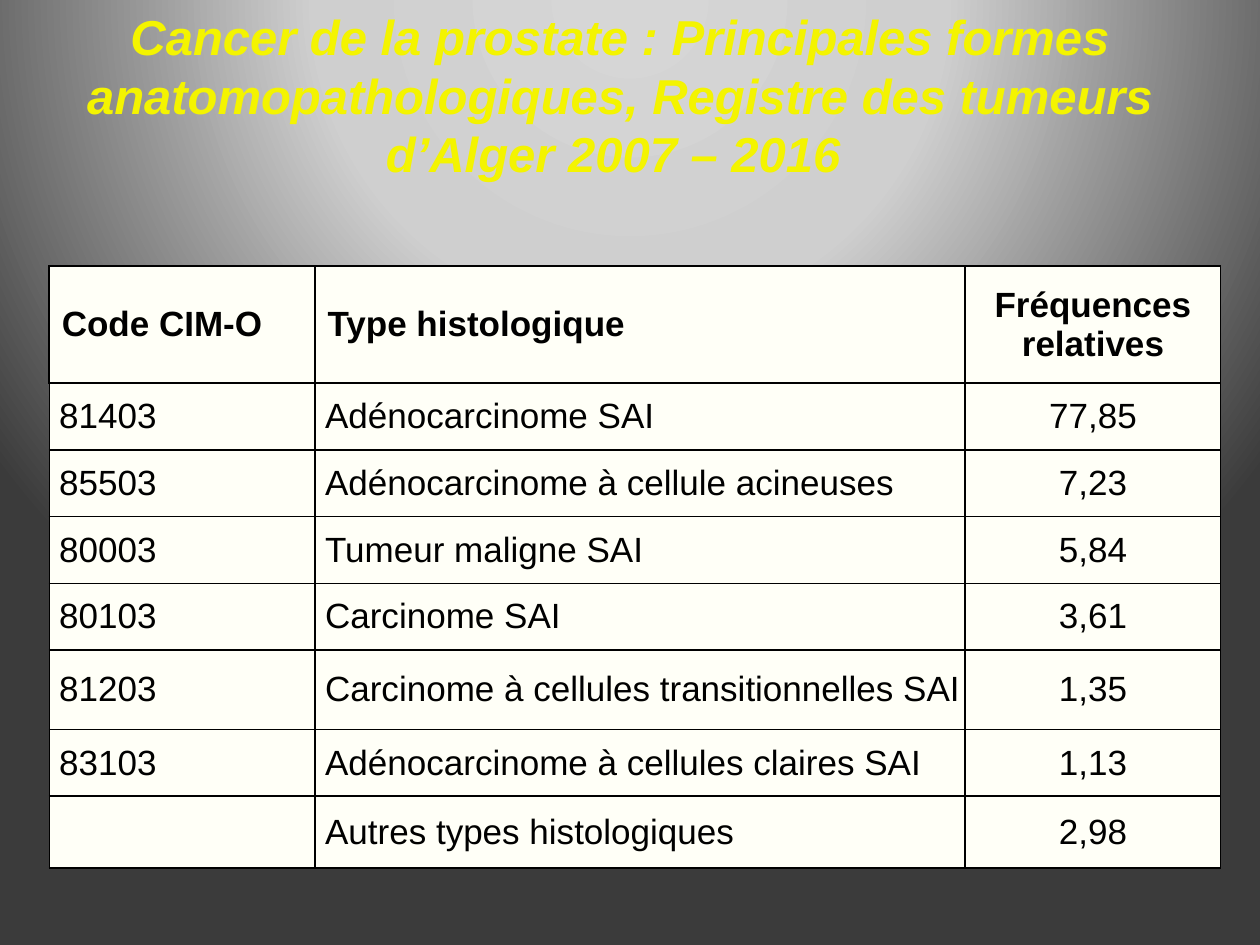
from pptx import Presentation
from pptx import util as u
from pptx.dml.color import RGBColor
from pptx.enum import text
from pptx.oxml import parse_xml
from pptx.oxml.ns import nsdecls

BLACK = RGBColor(0x00, 0x00, 0x00)
IVORY = RGBColor(0xFF, 0xFF, 0xF7)
YELLOW = RGBColor(0xF4, 0xF4, 0x00)
BACKDROP_STOPS = [(0, "D6D6D6"), (40, "CFCFCF"), (100, "3B3B3B")]
LEFT, CENTER = text.PP_ALIGN.LEFT, text.PP_ALIGN.CENTER


def write(frame, words, size=20, color=BLACK, bold=False, italic=False, align=LEFT):
    para = frame.paragraphs[0]
    para.alignment = align
    span = para.add_run()
    span.text = words
    font = span.font
    font.name, font.size, font.color.rgb = "Arial", u.Pt(size), color
    font.bold, font.italic = bold, italic


def add_borders(cell, **widths):
    """Draw black edges; widths are points keyed by L, R, T and B, in that order."""
    properties = cell._tc.get_or_add_tcPr()
    for position, (side, points) in enumerate(widths.items()):
        properties.insert(position, parse_xml(
            f'<a:ln{side} {nsdecls("a")} w="{u.Pt(points)}"><a:solidFill>'
            f'<a:srgbClr val="{BLACK}"/></a:solidFill></a:ln{side}>'))


deck = Presentation()
deck.slide_width, deck.slide_height = u.Inches(10), u.Inches(7.5)
page = deck.slides.add_slide(deck.slide_layouts[6])

# Backdrop: a circular gradient centred above the page
page.background.fill.gradient()
gradient = page.background.fill._fill._gradFill
stops = "".join(f'<a:gs pos="{share * 1000}"><a:srgbClr val="{color}"/></a:gs>'
                for share, color in BACKDROP_STOPS)
gradient.getparent().replace(gradient, parse_xml(
    f'<a:gradFill {nsdecls("a")} rotWithShape="1"><a:gsLst>{stops}</a:gsLst>'
    '<a:path path="circle"><a:fillToRect l="50000" t="-80000" r="50000" b="180000"/>'
    '</a:path></a:gradFill>'))

# Table of histological types
rows = [
    ("Code CIM-O", "Type histologique", "Fréquences relatives"),
    ("81403", "Adénocarcinome SAI", "77,85"),
    ("85503", "Adénocarcinome à cellule acineuses", "7,23"),
    ("80003", "Tumeur maligne SAI", "5,84"),
    ("80103", "Carcinome SAI", "3,61"),
    ("81203", "Carcinome à cellules transitionnelles SAI", "1,35"),
    ("83103", "Adénocarcinome à cellules claires SAI", "1,13"),
    ("", "Autres types histologiques", "2,98"),
]
column_widths = [2.11, 5.16, 2.03]
row_heights = [0.93, 0.53, 0.53, 0.53, 0.53, 0.63, 0.53, 0.57]
frame = page.shapes.add_table(
    len(rows), len(column_widths), u.Inches(0.39), u.Inches(2.11),
    u.Inches(sum(column_widths)), u.Inches(sum(row_heights)))
table = frame.table
table.horz_banding = table.first_row = False
for column, width in zip(table.columns, column_widths):
    column.width = u.Inches(width)

for r, (row, height) in enumerate(zip(rows, row_heights)):
    table.rows[r].height = u.Inches(height)
    for c, words in enumerate(row):
        cell = table.cell(r, c)
        cell.fill.solid()
        cell.fill.fore_color.rgb = IVORY
        cell.vertical_anchor = text.MSO_ANCHOR.MIDDLE
        if r > 0:
            cell.margin_right = cell.margin_top = cell.margin_bottom = 0
            cell.margin_left = 0 if c == 2 else u.Inches(0.08)
        if words:
            write(cell.text_frame, words, bold=r == 0, align=CENTER if c == 2 else LEFT)
        add_borders(cell, L=0.75 if c == 0 and r > 0 else 1,
                    R=0.75 if c == 2 else 1, T=1, B=1)

# Title
box = page.shapes.add_textbox(u.Inches(0.31), 0, u.Inches(9.22), u.Inches(1.51))
box.text_frame.word_wrap = True
box.text_frame.auto_size = text.MSO_AUTO_SIZE.SHAPE_TO_FIT_TEXT
write(box.text_frame,
      "Cancer de la prostate : Principales formes anatomopathologiques, "
      "Registre des tumeurs d’Alger 2007 – 2016 ",
      size=28, color=YELLOW, bold=True, italic=True, align=CENTER)

deck.save("out.pptx")
